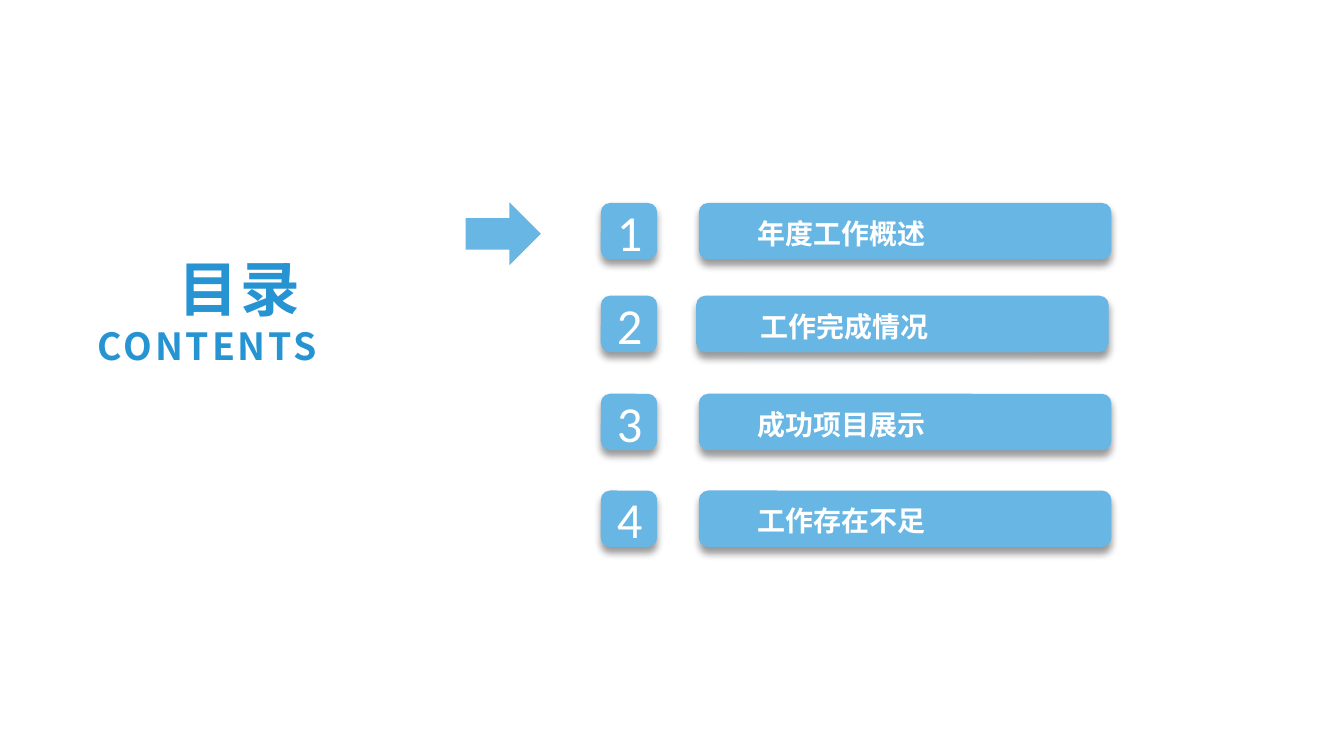
from dataclasses import dataclass
from lxml.etree import SubElement
from pptx import Presentation
from pptx.dml.color import RGBColor
from pptx.enum.shapes import MSO_SHAPE
from pptx.enum.text import MSO_ANCHOR, MSO_AUTO_SIZE, PP_ALIGN
from pptx.oxml import parse_xml
from pptx.oxml.ns import nsdecls, qn
from pptx.util import Inches, Pt


@dataclass(frozen=True)
class Theme:
    fill: RGBColor = RGBColor(0x68, 0xB6, 0xE4)
    title: RGBColor = RGBColor(0x26, 0x93, 0xD3)
    white: RGBColor = RGBColor(0xFF, 0xFF, 0xFF)
    latin: str = "Calibri"
    cjk: str = "Noto Sans CJK SC"
    title_size: int = 32
    subtitle_size: int = 20
    number_size: int = 27
    label_size: int = 15


theme = Theme()

SHADOW = f"""<a:effectLst {nsdecls('a')}>
  <a:outerShdw blurRad="50800" dist="38100" dir="5400000" algn="t" rotWithShape="0">
    <a:srgbClr val="000000"><a:alpha val="40000"/></a:srgbClr>
  </a:outerShdw>
</a:effectLst>"""


def add_block(shapes, kind, left, top, width, height, shadow=False):
    sp = shapes.add_shape(kind, Inches(left), Inches(top), Inches(width), Inches(height))
    sp.fill.solid()
    sp.fill.fore_color.rgb = theme.fill
    sp.line.fill.background()
    sp.shadow.inherit = False
    if shadow:
        spPr = sp._element.spPr
        spPr.replace(spPr.find(qn("a:effectLst")), parse_xml(SHADOW))
    return sp


def set_text(p, text, name, size, color, bold, align, spacing=None):
    p.alignment = align
    r = p.add_run()
    r.text = text
    for font in (p.font, r.font):
        font.name = name
        font.size = Pt(size)
        font.bold = bold
        font.color.rgb = color
    rPr = r._r.get_or_add_rPr()
    SubElement(rPr, qn("a:ea")).set("typeface", name)
    if spacing:
        rPr.set("spc", str(int(spacing * 100)))


prs = Presentation()
prs.slide_width = Inches(10)
prs.slide_height = prs.slide_width * 9 // 16
s = prs.slides.add_slide(prs.slide_layouts[5])

title = s.shapes.title
title.left, title.top = Inches(0.16), Inches(1.82)
title.width, title.height = Inches(2.3), Inches(0.98)
tf = title.text_frame
tf.word_wrap = True
tf.auto_size = MSO_AUTO_SIZE.SHAPE_TO_FIT_TEXT
tf.vertical_anchor = MSO_ANCHOR.TOP
lines = [("目录 ", theme.title_size), ("CONTENTS", theme.subtitle_size)]
for i, (text, size) in enumerate(lines):
    p = tf.add_paragraph() if i else tf.paragraphs[0]
    set_text(p, text, theme.cjk, size, theme.title, True, PP_ALIGN.RIGHT, 1.5)

rows = [
    ("年度工作概述", 1.51, 5.2, 5.51, 2.17),
    ("工作完成情况", 2.2, 5.18, 5.53, 2.17),
    ("成功项目展示", 2.93, 5.2, 5.51, 2.24),
    ("工作存在不足", 3.65, 5.2, 5.51, 2.24),
]
for number, (text, top, bar_left, label_left, label_width) in enumerate(rows, 1):
    badge = add_block(s.shapes, MSO_SHAPE.ROUNDED_RECTANGLE, 4.47, top, 0.42, 0.42, True)
    tf = badge.text_frame
    tf.vertical_anchor = MSO_ANCHOR.MIDDLE
    set_text(tf.paragraphs[0], str(number), theme.latin, theme.number_size,
             theme.white, False, PP_ALIGN.CENTER)

    entry = s.shapes.add_group_shape()
    add_block(entry.shapes, MSO_SHAPE.ROUNDED_RECTANGLE, bar_left, top, 3.07, 0.42, True)
    label = add_block(entry.shapes, MSO_SHAPE.RECTANGLE, label_left, top + 0.03, label_width, 0.39)
    tf = label.text_frame
    tf.word_wrap = True
    tf.auto_size = MSO_AUTO_SIZE.SHAPE_TO_FIT_TEXT
    tf.vertical_anchor = MSO_ANCHOR.TOP
    tf.margin_left = tf.margin_right = Inches(0.13)
    tf.margin_top = tf.margin_bottom = Inches(0.07)
    set_text(tf.paragraphs[0], text, theme.cjk, theme.label_size,
             theme.white, True, PP_ALIGN.LEFT)

arrow = add_block(s.shapes, MSO_SHAPE.DOWN_ARROW, 3.51, 1.46, 0.47, 0.56)
arrow.rotation = 270

prs.save("out.pptx")
